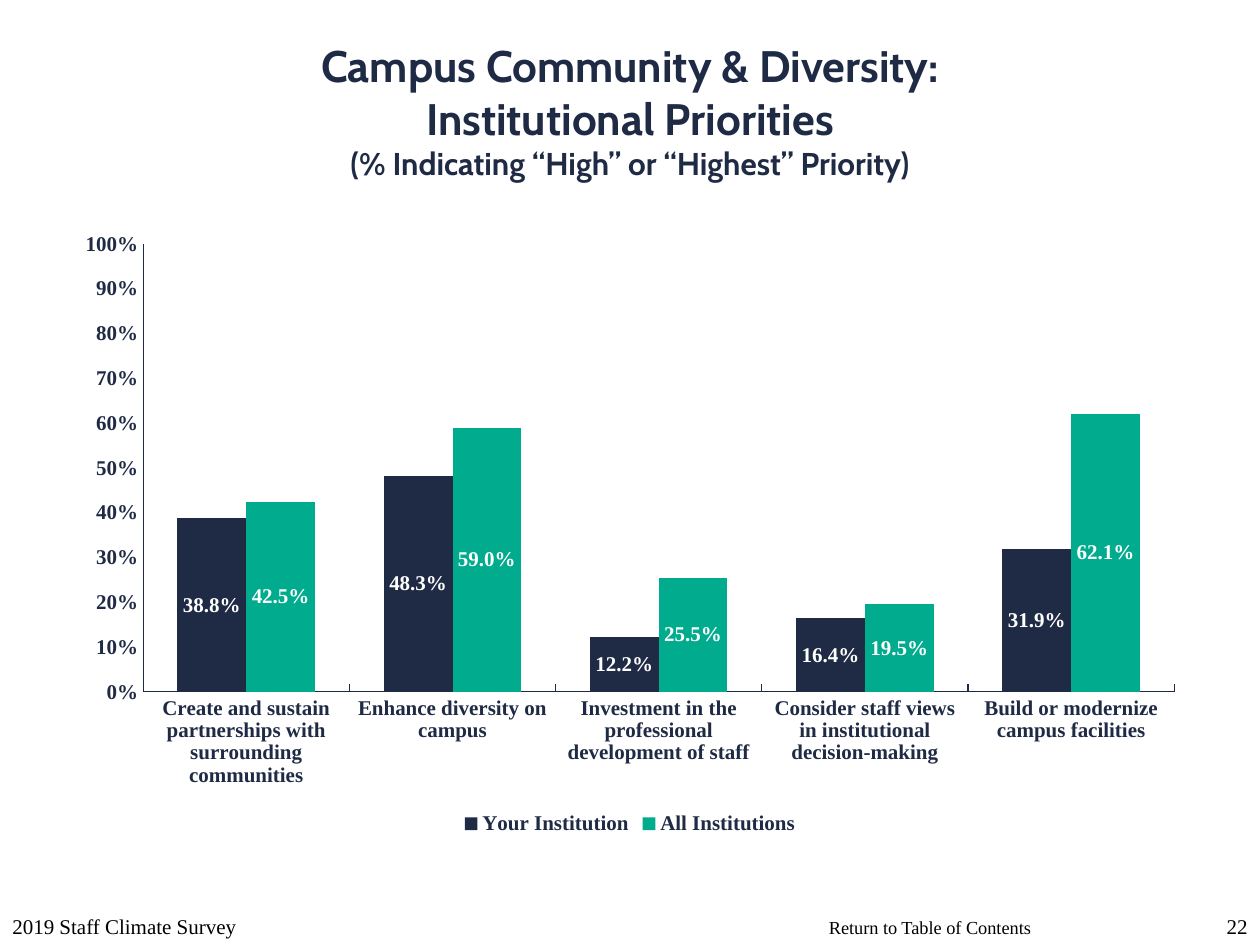
import pptx
import pptx.chart.data
import pptx.dml.color
import pptx.enum.chart
import pptx.enum.text
import pptx.util

Pt = pptx.util.Pt
Align = pptx.enum.text.PP_ALIGN
Anchor = pptx.enum.text.MSO_ANCHOR
Chart = pptx.enum.chart


class Theme:
    navy = pptx.dml.color.RGBColor.from_string("1F2A44")
    green = pptx.dml.color.RGBColor.from_string("00AB8E")
    white = pptx.dml.color.RGBColor.from_string("FFFFFF")
    black = pptx.dml.color.RGBColor.from_string("000000")
    head = "Cabin"
    body = "Times New Roman"
    title = 25.2
    sub = 18
    base = 12
    link = 10.5


def style(font, size=Theme.base, color=Theme.navy, face=Theme.body, bold=True):
    font.size = Pt(size)
    font.color.rgb = color
    font.name = face
    font.bold = bold


def write(lines, box, align=Align.LEFT, anchor=Anchor.BOTTOM, wrap=True,
          sizes=(Theme.base,), color=Theme.black, face=Theme.body, bold=False):
    """Add a text box holding one paragraph, with a size for each line."""
    frame = slide.shapes.add_textbox(*map(Pt, box)).text_frame
    frame.word_wrap = wrap
    frame.vertical_anchor = anchor
    para = frame.paragraphs[0]
    para.alignment = align
    for i, (line, size) in enumerate(zip(lines, sizes)):
        if i:
            para.add_line_break()
        run = para.add_run()
        run.text = line
        style(run.font, size, color, face, bold)


deck = pptx.Presentation()
deck.slide_width, deck.slide_height = Pt(720), Pt(540)
slide = deck.slides.add_slide(deck.slide_layouts[6])

write(["Return to Table of Contents"], (466.56, 519.84, 131.04, 20.16),
      anchor=Anchor.TOP, wrap=False, sizes=[Theme.link])
write(["Campus Community & Diversity:", "Institutional Priorities",
       "(% Indicating “High” or “Highest” Priority)"],
      (0, 18, 720, 90), align=Align.CENTER, anchor=Anchor.MIDDLE,
      sizes=[Theme.title, Theme.title, Theme.sub],
      color=Theme.navy, face=Theme.head, bold=True)

data = pptx.chart.data.CategoryChartData(number_format="0.0%")
data.categories = [
    "Create and sustain partnerships with surrounding communities",
    "Enhance diversity on campus",
    "Investment in the professional development of staff",
    "Consider staff views in institutional decision-making",
    "Build or modernize campus facilities",
]
data.add_series("Your Institution", [0.388, 0.483, 0.122, 0.164, 0.319])
data.add_series("All Institutions", [0.425, 0.59, 0.255, 0.195, 0.621])
chart = slide.shapes.add_chart(
    Chart.XL_CHART_TYPE.COLUMN_CLUSTERED,
    Pt(36), Pt(126), Pt(648), Pt(354), data).chart
style(chart.font)
chart.has_title = False
chart.has_legend = True
chart.legend.position = Chart.XL_LEGEND_POSITION.BOTTOM
chart.legend.include_in_layout = False
style(chart.legend.font)

cats, vals = chart.category_axis, chart.value_axis
for axis, tick in ((cats, Chart.XL_TICK_MARK.INSIDE),
                   (vals, Chart.XL_TICK_MARK.NONE)):
    axis.major_tick_mark = tick
    axis.minor_tick_mark = Chart.XL_TICK_MARK.NONE
    axis.has_major_gridlines = False
    axis.format.line.color.rgb = Theme.navy
    axis.format.line.width = Pt(0.75)
    style(axis.tick_labels.font)
vals.minimum_scale, vals.maximum_scale, vals.major_unit = 0, 1, 0.1
vals.tick_labels.number_format = "0%"
vals.tick_labels.number_format_is_linked = False

plot = chart.plots[0]
plot.gap_width = 100
plot.overlap = 0
plot.vary_by_categories = False
for series, color in zip(plot.series, (Theme.navy, Theme.green)):
    series.format.fill.solid()
    series.format.fill.fore_color.rgb = color
    labels = series.data_labels
    labels.show_value = True
    labels.position = Chart.XL_LABEL_POSITION.CENTER
    labels.number_format = "0.0%"
    labels.number_format_is_linked = False
    style(labels.font, color=Theme.white)

write(["2019 Staff Climate Survey"], (0, 504, 228.24, 36))
write(["22"], (684, 504, 36, 36), align=Align.RIGHT)

deck.save("out.pptx")
